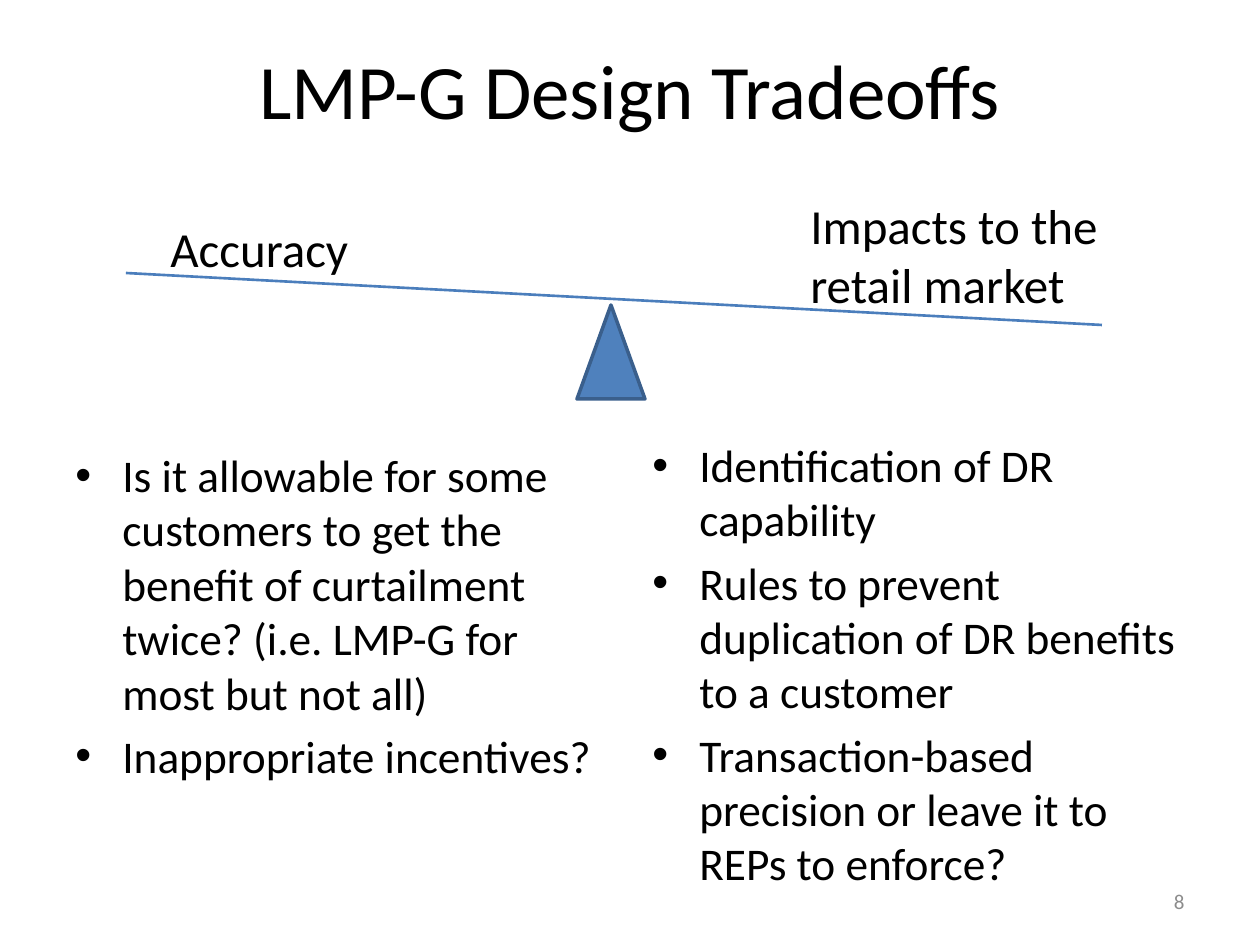
from lxml import etree
from pptx import Presentation
from pptx import util as u
from pptx.dml.color import RGBColor
from pptx.enum import shapes, text
from pptx.oxml.ns import qn

PX = 914400 // 126  # one px in EMU
FONT = "Calibri"
HUES = {"ink": "000000", "grey": "8C8C8C", "beam": "4B7EBC",
        "fill": "4F81BD", "edge": "3A5F8C"}
LEFT = ["Is it allowable for some customers to get the benefit of "
        "curtailment twice? (i.e. LMP-G for most but not all)",
        "Inappropriate incentives?"]
RIGHT = ["Identification of DR capability",
         "Rules to prevent duplication of DR benefits to a customer",
         "Transaction-based precision or leave it to REPs to enforce?"]


def hue(name):
    return RGBColor.from_string(HUES[name])


def px(*nums):
    return [u.Emu(n * PX) for n in nums]


def style(para, size, color="ink", align=text.PP_ALIGN.LEFT):
    para.alignment = align
    font = para.font
    font.name, font.size = FONT, u.Pt(size)
    font.color.rgb = hue(color)


def label(slide, box, words, size, **look):
    frame = slide.shapes.add_textbox(*px(*box)).text_frame
    frame.word_wrap = True
    frame.text = words
    style(frame.paragraphs[0], size, **look)
    return frame


def title(slide, box, words):
    head = slide.shapes.title
    head.left, head.top, head.width, head.height = px(*box)
    frame = head.text_frame
    frame.text = words
    frame.vertical_anchor = text.MSO_ANCHOR.MIDDLE
    style(frame.paragraphs[0], 44, align=text.PP_ALIGN.CENTER)


def scale(slide, box):
    x, y, w, h = box
    # Tilted beam
    beam = slide.shapes.add_connector(
        shapes.MSO_CONNECTOR.STRAIGHT, *px(x, y + 84, x + w, y + 136))
    beam.line.color.rgb = hue("beam")
    beam.line.width = u.Pt(1.5)
    etree.SubElement(beam._element.spPr, qn("a:effectLst"))
    # Pivot
    pivot = slide.shapes.add_shape(
        shapes.MSO_SHAPE.ISOSCELES_TRIANGLE,
        *px(x + 451, y + h - 94, 68, 94))
    pivot.shadow.inherit = False
    pivot.fill.solid()
    pivot.fill.fore_color.rgb = hue("fill")
    pivot.line.color.rgb = hue("edge")
    pivot.line.width = u.Pt(2)
    # Weights on each side
    label(slide, (x + 32, y + 23, 346, 72), "Accuracy", 28)
    label(slide, (x + 672, y, 410, 131), "Impacts to the retail market", 28)


def points(slide, box, items):
    frame = slide.shapes.add_textbox(*px(*box)).text_frame
    frame.word_wrap = True
    for i, item in enumerate(items):
        para = frame.paragraphs[0] if i == 0 else frame.add_paragraph()
        para.text = item
        props = para._p.get_or_add_pPr()
        props.set("marL", str(47 * PX))
        props.set("indent", str(-47 * PX))
        para.space_before = u.Pt(5 if i else 0)
        etree.SubElement(props, qn("a:buFont"), typeface="Arial")
        etree.SubElement(props, qn("a:buChar"), char="•")
        style(para, 25.9)


def main():
    deck = Presentation()
    deck.slide_width, deck.slide_height = px(1260, 945)
    slide = deck.slides.add_slide(deck.slide_layouts[5])
    title(slide, (63, 10, 1134, 158), "LMP-G Design Tradeoffs")
    scale(slide, (126, 189, 976, 210))
    points(slide, (63, 441, 557, 403), LEFT)
    points(slide, (640, 431, 557, 413), RIGHT)
    # Page number
    page = label(slide, (903, 876, 294, 50), "8", 12, color="grey",
                 align=text.PP_ALIGN.RIGHT)
    page.vertical_anchor = text.MSO_ANCHOR.MIDDLE
    deck.save("out.pptx")


if __name__ == "__main__":
    main()
